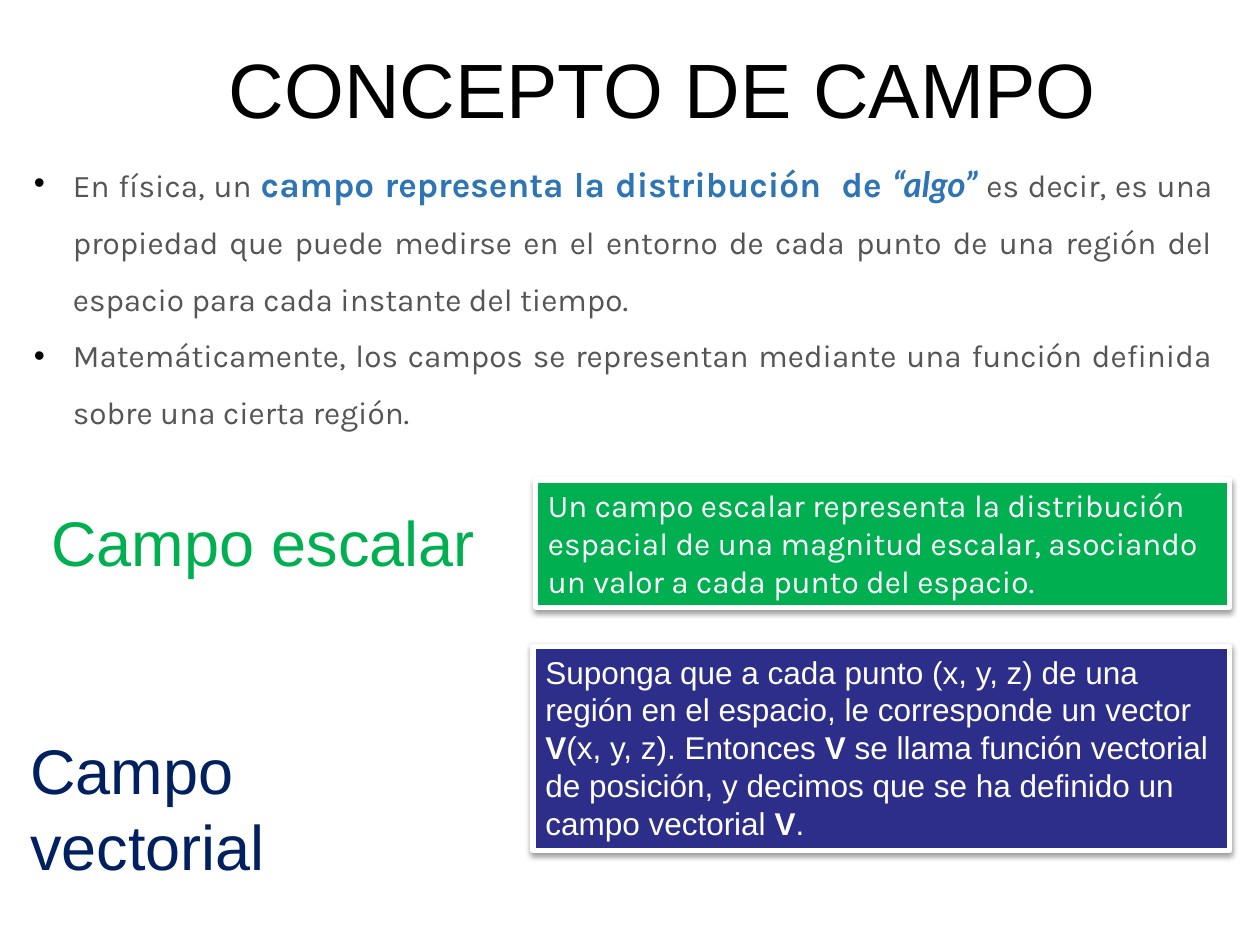
from lxml.etree import SubElement
from pptx import Presentation
from pptx.dml.color import RGBColor
from pptx.enum.shapes import MSO_SHAPE
from pptx.enum.text import MSO_ANCHOR, MSO_AUTO_SIZE, PP_ALIGN
from pptx.oxml import parse_xml
from pptx.oxml.ns import nsdecls, qn
from pptx.util import Inches, Pt

BLACK = RGBColor(0x00, 0x00, 0x00)
WHITE = RGBColor(0xFF, 0xFF, 0xFF)
GRAY = RGBColor(0x55, 0x55, 0x55)
BLUE = RGBColor(0x2E, 0x75, 0xB6)
GREEN = RGBColor(0x00, 0xB0, 0x50)
NAVY = RGBColor(0x00, 0x20, 0x60)
INDIGO = RGBColor(0x2D, 0x2D, 0x8A)

# Text formats
TITLE = {"name": "Arial", "size": Pt(44), "color": BLACK}
BODY = {"name": "Karla", "size": Pt(18), "color": GRAY}
KEY = {"name": "Karla", "size": Pt(20), "color": BLUE, "bold": True}
KEY_QUOTE = {**KEY, "name": "Lato", "italic": True}
HEADING = {"name": "Arial", "size": Pt(36)}
SCALAR_NOTE = {"name": "Karla", "size": Pt(18), "color": WHITE}
VECTOR_NOTE = {**SCALAR_NOTE, "name": "Arial"}
VECTOR_SYMBOL = {**VECTOR_NOTE, "bold": True}

SHADOW_XML = (
    f'<a:effectLst {nsdecls("a")}>'
    '<a:outerShdw blurRad="40000" dist="20000" dir="5400000" rotWithShape="0">'
    '<a:srgbClr val="000000"><a:alpha val="38000"/></a:srgbClr>'
    "</a:outerShdw></a:effectLst>"
)


class FieldSlide:
    """Holds the current slide and adds its styled elements."""

    def __init__(self, presentation):
        self.slide = presentation.slides.add_slide(presentation.slide_layouts[5])

    def add_runs(self, paragraph, runs):
        for text, style in runs:
            run = paragraph.add_run()
            run.text = text
            for key, value in style.items():
                if key == "color":
                    run.font.color.rgb = value
                else:
                    setattr(run.font, key, value)

    def title(self, box, text):
        title = self.slide.shapes.title
        for side, length in zip(("left", "top", "width", "height"), box):
            setattr(title, side, Inches(length))
        title.text_frame.vertical_anchor = MSO_ANCHOR.MIDDLE
        paragraph = title.text_frame.paragraphs[0]
        paragraph.alignment = PP_ALIGN.CENTER
        self.add_runs(paragraph, [(text, TITLE)])

    def text_frame(self, box):
        frame = self.slide.shapes.add_textbox(*map(Inches, box)).text_frame
        frame.word_wrap = True
        frame.auto_size = MSO_AUTO_SIZE.SHAPE_TO_FIT_TEXT
        return frame

    def heading(self, box, text, color):
        paragraph = self.text_frame(box).paragraphs[0]
        self.add_runs(paragraph, [(text, {**HEADING, "color": color})])

    def bullets(self, box, items):
        frame = self.text_frame(box)
        for index, runs in enumerate(items):
            paragraph = frame.add_paragraph() if index else frame.paragraphs[0]
            paragraph.alignment = PP_ALIGN.JUSTIFY
            paragraph.line_spacing = 1.5
            properties = paragraph._p.get_or_add_pPr()
            properties.set("marL", str(Inches(0.31)))
            properties.set("indent", str(Inches(-0.31)))
            bullet_color = SubElement(properties, qn("a:buClr"))
            SubElement(bullet_color, qn("a:srgbClr"), val=str(BLACK))
            SubElement(properties, qn("a:buFont"), typeface="Arial")
            SubElement(properties, qn("a:buChar"), char="•")
            self.add_runs(paragraph, runs)

    def note(self, box, fill, runs):
        note = self.slide.shapes.add_shape(MSO_SHAPE.RECTANGLE, *map(Inches, box))
        note.fill.solid()
        note.fill.fore_color.rgb = fill
        note.line.color.rgb = WHITE
        note.line.width = Pt(3)
        note._element.spPr.append(parse_xml(SHADOW_XML))
        frame = note.text_frame
        frame.word_wrap = True
        frame.auto_size = MSO_AUTO_SIZE.SHAPE_TO_FIT_TEXT
        frame.vertical_anchor = MSO_ANCHOR.TOP
        frame.paragraphs[0].alignment = PP_ALIGN.LEFT
        self.add_runs(frame.paragraphs[0], runs)


def main():
    presentation = Presentation()
    presentation.slide_width = Inches(10)
    presentation.slide_height = Inches(7.5)
    fields = FieldSlide(presentation)

    # Definition of a field
    fields.title((0.76, 0.07, 9, 1.25), "CONCEPTO DE CAMPO")
    fields.bullets((0.17, 1.07, 9.55, 2.42), [
        [
            ("En física, un ", BODY),
            ("campo representa la distribución  de ", KEY),
            ("“algo”", KEY_QUOTE),
            (" es decir, es una propiedad que puede medirse en el entorno de "
             "cada punto de una región del espacio para cada instante del "
             "tiempo.", BODY),
        ],
        [("Matemáticamente, los campos se representan mediante una función "
          "definida sobre una cierta región.", BODY)],
    ])

    # Scalar field
    fields.heading((0.31, 3.95, 3.6, 0.71), "Campo escalar", GREEN)
    fields.note((4.25, 3.81, 5.51, 1.01), GREEN, [
        ("Un campo escalar representa la distribución espacial de una magnitud "
         "escalar, asociando un valor a cada punto del espacio.", SCALAR_NOTE),
    ])

    # Vector field
    fields.heading((0.14, 5.76, 3.53, 0.71), "Campo vectorial", NAVY)
    fields.note((4.23, 5.13, 5.53, 1.62), INDIGO, [
        ("Suponga que a cada punto (x, y, z) de una región en el espacio, le "
         "corresponde un vector ", VECTOR_NOTE),
        ("V", VECTOR_SYMBOL),
        ("(x, y, z). Entonces ", VECTOR_NOTE),
        ("V", VECTOR_SYMBOL),
        (" se llama función vectorial de posición, y decimos que se ha "
         "definido un campo vectorial ", VECTOR_NOTE),
        ("V", VECTOR_SYMBOL),
        (".", VECTOR_NOTE),
    ])

    presentation.save("out.pptx")


if __name__ == "__main__":
    main()
